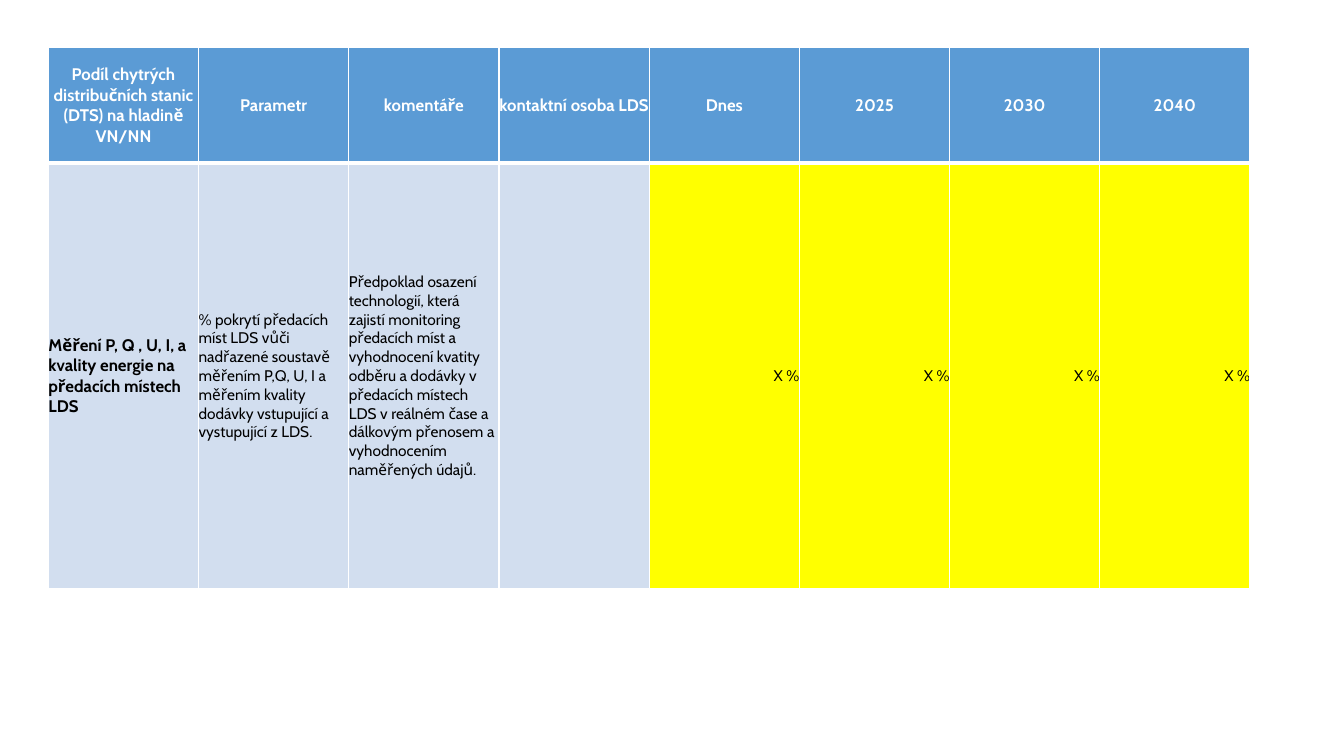
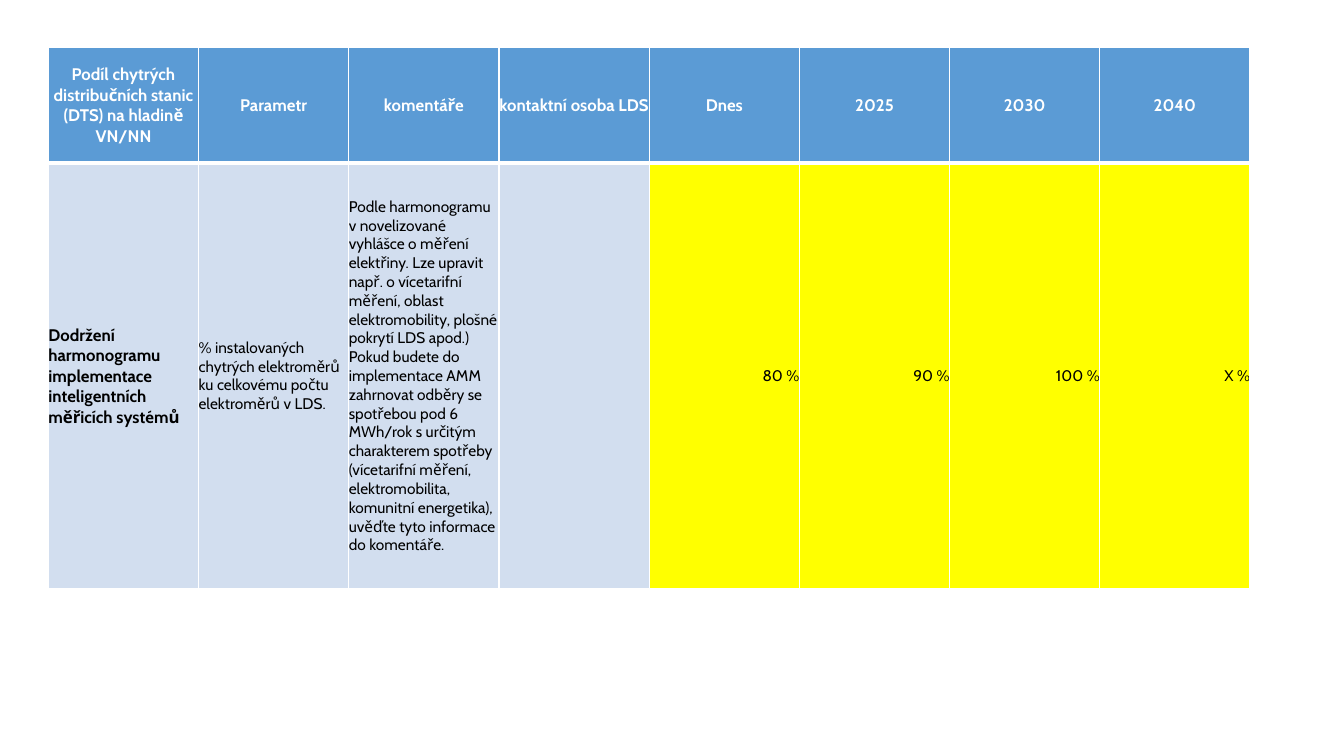
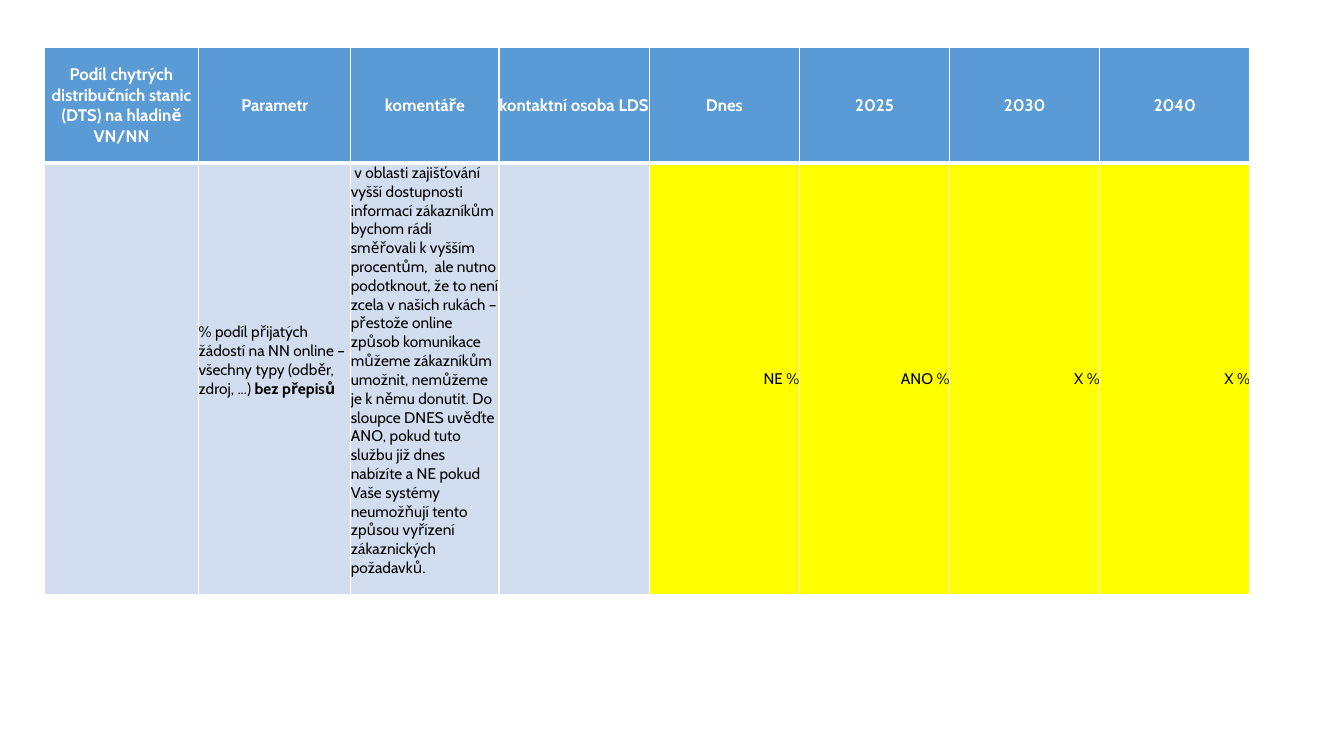
from dataclasses import dataclass

from lxml import etree
from pptx import Presentation
from pptx.dml.color import RGBColor
from pptx.enum.text import MSO_ANCHOR, PP_ALIGN
from pptx.oxml.ns import qn
from pptx.util import Inches, Pt

LEFT, CENTER, RIGHT = PP_ALIGN.LEFT, PP_ALIGN.CENTER, PP_ALIGN.RIGHT
MIDDLE = MSO_ANCHOR.MIDDLE


@dataclass(frozen=True)
class Theme:
    font: str = "Cabin"
    heading_size: Pt = Pt(12)
    body_size: Pt = Pt(11)
    white: RGBColor = RGBColor(0xFF, 0xFF, 0xFF)
    black: RGBColor = RGBColor(0x00, 0x00, 0x00)
    header_fill: RGBColor = RGBColor(0x5B, 0x9B, 0xD5)
    label_fill: RGBColor = RGBColor(0xD2, 0xDE, 0xEF)
    value_fill: RGBColor = RGBColor(0xFF, 0xFF, 0x00)
    thin_border: Pt = Pt(1)
    thick_border: Pt = Pt(3)


THEME = Theme()

TABLE_TOP, TABLE_RIGHT = 0.47, 12.4
HEADER_HEIGHT = 1.15
COLUMN_WIDTH = 1.49
FIRST_VALUE_COLUMN = 4

HEADERS = [
    "Podíl chytrých distribučních stanic (DTS) na hladině VN/NN",
    "Parametr",
    "komentáře",
    "kontaktní osoba LDS",
    "Dnes",
    "2025",
    "2030",
    "2040",
]

EVEN_WIDTHS = [COLUMN_WIDTH] * len(HEADERS)

# Bottom margins lift the text of a column above the middle of its cell.
INDICATORS = [
    {
        "cells": [
            "Měření P, Q , U, I, a kvality energie na předacích místech LDS",
            "% pokrytí předacích míst LDS vůči nadřazené soustavě měřením P,Q, U, I a "
            "měřením kvality dodávky vstupující a vystupující z LDS.",
            "Předpoklad osazení technologií, která zajistí monitoring předacích míst a "
            "vyhodnocení kvatity odběru a dodávky v předacích místech LDS v reálném čase "
            "a dálkovým přenosem a vyhodnocením naměřených údajů.",
            "", "X %", "X %", "X %", "X %",
        ],
        "widths": EVEN_WIDTHS,
        "height": 4.22,
        "bold_ending": "",
        "bottom_margins": {},
    },
    {
        "cells": [
            "Dodržení harmonogramu implementace inteligentních měřicích systémů",
            "% instalovaných chytrých elektroměrů ku celkovému počtu elektroměrů v LDS.",
            "Podle harmonogramu v novelizované vyhlášce o měření elektřiny. Lze upravit "
            "např. o vícetarifní měření, oblast elektromobility, plošné pokrytí LDS apod.) "
            "Pokud budete do implementace AMM zahrnovat odběry se spotřebou pod 6 MWh/rok "
            "s určitým charakterem spotřeby (vícetarifní měření, elektromobilita, "
            "komunitní energetika), uvěďte tyto informace do komentáře.",
            "", "80 %", "90 %", "100 %", "X %",
        ],
        "widths": EVEN_WIDTHS,
        "height": 4.22,
        "bold_ending": "",
        "bottom_margins": {},
    },
    {
        "cells": [
            "",
            "% podíl přijatých žádostí na NN online – všechny typy (odběr, zdroj, ...) ",
            " v oblasti zajišťování vyšší dostupnosti informací zákazníkům bychom rádi "
            "směřovali k vyšším procentům,  ale nutno podotknout, že to není zcela v našich "
            "rukách – přestože online způsob komunikace můžeme zákazníkům umožnit, nemůžeme "
            "je k němu donutit. Do sloupce DNES uvěďte ANO, pokud tuto službu již dnes "
            "nabízíte a NE pokud Vaše systémy neumožňují tento způsou vyřízení zákaznických "
            "požadavků.",
            "", "NE %", "ANO %", "X %", "X %",
        ],
        "widths": [1.53, 1.51, 1.47] + EVEN_WIDTHS[3:],
        "height": 4.28,
        "bold_ending": "bez přepisů",
        "bottom_margins": {1: 0.37, 2: 0.17},
    },
]


def set_borders(cell, top, bottom):
    """Draw white borders: thin at the sides, of the given widths above and below."""
    properties = cell._tc.get_or_add_tcPr()
    sides = {"L": THEME.thin_border, "R": THEME.thin_border, "T": top, "B": bottom}
    for position, (side, width) in enumerate(sides.items()):
        line = etree.Element(qn(f"a:ln{side}"), w=str(int(width)))
        fill = etree.SubElement(line, qn("a:solidFill"))
        etree.SubElement(fill, qn("a:srgbClr"), val=str(THEME.white))
        properties.insert(position, line)


def write_cell(cell, text, fill, color, size, bold, alignment):
    cell.fill.solid()
    cell.fill.fore_color.rgb = fill
    cell.vertical_anchor = MIDDLE
    cell.margin_left = cell.margin_right = cell.margin_top = cell.margin_bottom = 0
    paragraph = cell.text_frame.paragraphs[0]
    paragraph.alignment = alignment
    if text:
        paragraph.add_run().text = text
    paragraph.font.name = THEME.font
    paragraph.font.size = size
    paragraph.font.bold = bold
    paragraph.font.color.rgb = color


presentation = Presentation()
presentation.slide_width = Inches(13.33)
presentation.slide_height = Inches(7.5)
blank_layout = presentation.slide_layouts[6]

for indicator in INDICATORS:
    slide = presentation.slides.add_slide(blank_layout)
    widths = indicator["widths"]
    heights = [HEADER_HEIGHT, indicator["height"]]
    table_width = sum(widths)
    table = slide.shapes.add_table(
        len(heights), len(widths),
        Inches(TABLE_RIGHT - table_width), Inches(TABLE_TOP),
        Inches(table_width), Inches(sum(heights)),
    ).table
    table.horz_banding = False
    for column, width in zip(table.columns, widths):
        column.width = Inches(width)
    for row, height in zip(table.rows, heights):
        row.height = Inches(height)

    for index, (header, text) in enumerate(zip(HEADERS, indicator["cells"])):
        header_cell, body_cell = table.cell(0, index), table.cell(1, index)
        write_cell(header_cell, header, THEME.header_fill, THEME.white,
                   THEME.heading_size, True, CENTER)
        set_borders(header_cell, THEME.thin_border, THEME.thick_border)

        is_name = index == 0
        is_value = index >= FIRST_VALUE_COLUMN
        write_cell(body_cell, text,
                   THEME.value_fill if is_value else THEME.label_fill, THEME.black,
                   THEME.heading_size if is_name else THEME.body_size, is_name,
                   RIGHT if is_value else LEFT)
        set_borders(body_cell, THEME.thick_border, THEME.thin_border)

    if indicator["bold_ending"]:
        ending = table.cell(1, 1).text_frame.paragraphs[0].add_run()
        ending.text = indicator["bold_ending"]
        ending.font.bold = True
    for index, margin in indicator["bottom_margins"].items():
        table.cell(1, index).margin_bottom = Inches(margin)

presentation.save("out.pptx")
